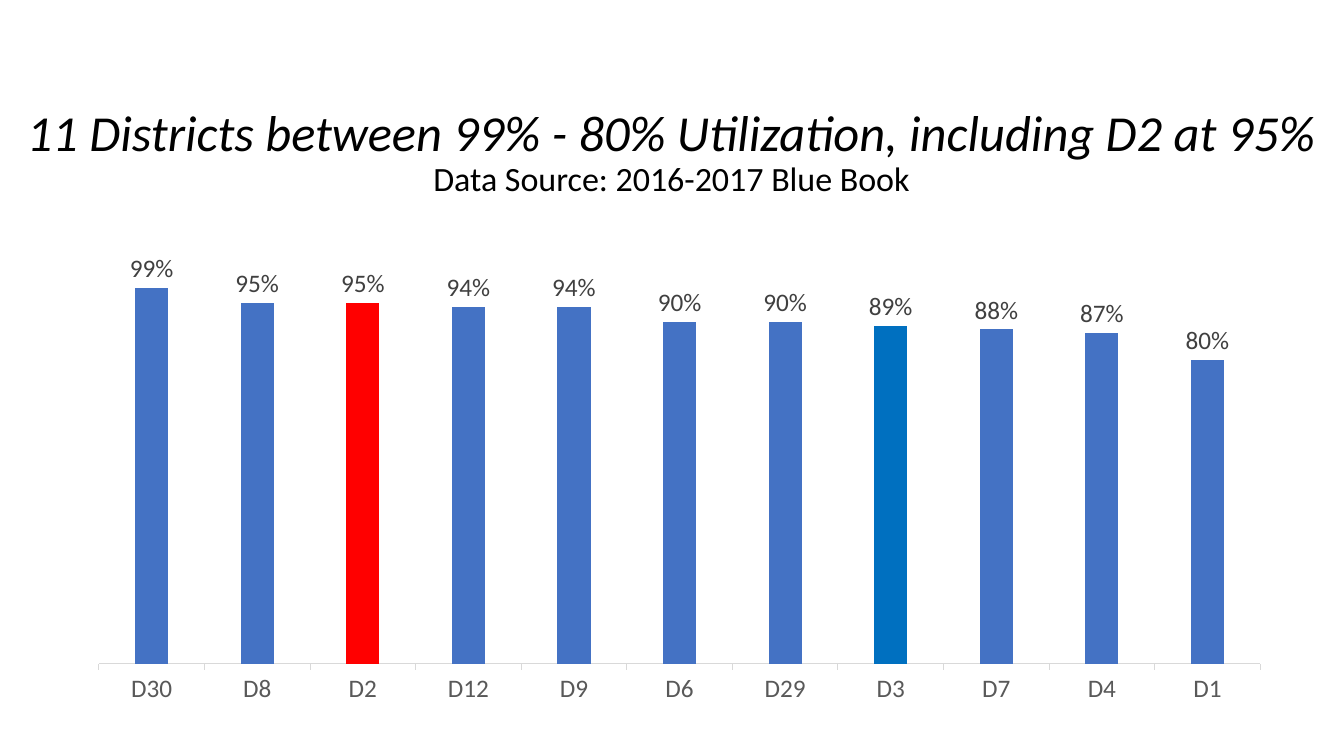
"""Build a slide charting district utilization between 99% and 80%."""
from lxml import etree
from pptx import Presentation, util as u
from pptx.chart.data import CategoryChartData
from pptx.dml.color import RGBColor
from pptx.enum import chart as ch, text
from pptx.oxml import ns

BLACK = RGBColor(0x00, 0x00, 0x00)
BLUE = RGBColor(0x44, 0x72, 0xC4)
RED = RGBColor(0xFF, 0x00, 0x00)
DEEP_BLUE = RGBColor(0x00, 0x70, 0xC0)
LABEL_GREY = RGBColor(0x40, 0x40, 0x40)
AXIS_GREY = RGBColor(0x59, 0x59, 0x59)
LINE_GREY = RGBColor(0xD9, 0xD9, 0xD9)


def style(font, size, color, **more):
    for name, value in dict(name="Calibri", size=u.Pt(size), **more).items():
        setattr(font, name, value)
    font.color.rgb = color


prs = Presentation()
prs.slide_width, prs.slide_height = u.Inches(13.33), u.Inches(7.5)
s = prs.slides.add_slide(prs.slide_layouts[6])

sp = s.shapes.add_textbox(*map(u.Inches, (0.1, 0.51, 13.12, 1.45)))
tf = sp.text_frame
for name, value in dict(word_wrap=True, margin_top=u.Inches(0.56),
                        vertical_anchor=text.MSO_ANCHOR.TOP).items():
    setattr(tf, name, value)
headings = [
    ("11 Districts between 99% - 80% Utilization, including D2 at 95%", 36, True),
    ("Data Source: 2016-2017 Blue Book", 24.3, False),
]
for i, (wording, size, italic) in enumerate(headings):
    p = tf.add_paragraph() if i else tf.paragraphs[0]
    p.alignment, p.line_spacing = text.PP_ALIGN.CENTER, 0.9
    r = p.add_run()
    r.text = wording
    style(r.font, size, BLACK, italic=italic)

utilization = {"D30": 0.99, "D8": 0.95, "D2": 0.95, "D12": 0.94, "D9": 0.94, "D6": 0.9,
               "D29": 0.9, "D3": 0.89, "D7": 0.88, "D4": 0.87, "D1": 0.8}
data = CategoryChartData(number_format="0%")
data.categories = list(utilization)
data.add_series("Series 1", list(utilization.values()))
chart = s.shapes.add_chart(ch.XL_CHART_TYPE.COLUMN_CLUSTERED,
                           *map(u.Inches, (0.74, 1.96, 12, 5.14)), data).chart
chart.has_legend = chart.has_title = False
style(chart.font, 10, BLACK)

cat = chart.category_axis
cat.major_tick_mark = ch.XL_TICK_MARK.OUTSIDE
style(cat.tick_labels.font, 18, AXIS_GREY)
cat.format.line.color.rgb, cat.format.line.width = LINE_GREY, u.Pt(0.75)

for name, value in dict(visible=False, has_major_gridlines=False,
                        minimum_scale=0, maximum_scale=1.2).items():
    setattr(chart.value_axis, name, value)

plot = chart.plots[0]
for name, value in dict(gap_width=219, overlap=-27, vary_by_categories=False,
                        has_data_labels=True).items():
    setattr(plot, name, value)
labels = plot.data_labels
for name, value in dict(show_value=True, number_format="0%", number_format_is_linked=False,
                        position=ch.XL_LABEL_POSITION.OUTSIDE_END).items():
    setattr(labels, name, value)
style(labels.font, 18, LABEL_GREY)

bars = plot.series[0]
bars.format.fill.solid()
bars.format.fill.fore_color.rgb = BLUE
for district, color in {"D2": RED, "D3": DEEP_BLUE}.items():
    fill = bars.points[list(utilization).index(district)].format.fill
    fill.solid()
    fill.fore_color.rgb = color

area = chart.element.find(".//" + ns.qn("c:plotArea"))
layout = area.find(ns.qn("c:layout"))
if layout is None:
    layout = etree.Element(ns.qn("c:layout"))
    area.insert(0, layout)
manual = etree.SubElement(layout, ns.qn("c:manualLayout"))
for tag, value in dict(layoutTarget="inner", xMode="edge", yMode="edge",
                       x=0.02, y=0.02, w=0.96, h=0.88).items():
    etree.SubElement(manual, ns.qn("c:" + tag), val=str(value))

prs.save("out.pptx")
